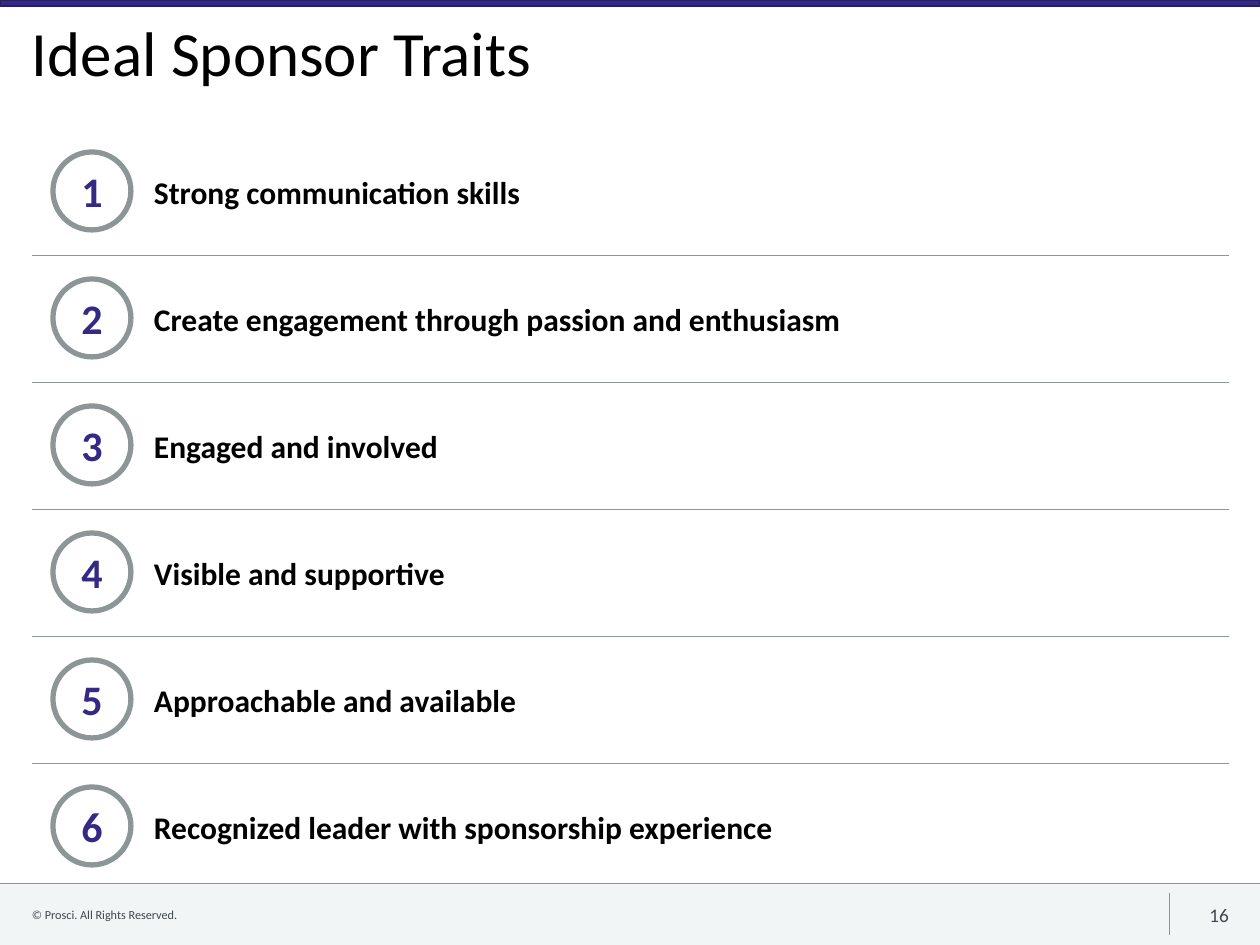
"""Build the Ideal Sponsor Traits slide: six numbered rows with a footer."""
from lxml import etree
from pptx import Presentation
from pptx import util as u
from pptx.dml.color import RGBColor
from pptx.enum import shapes, text
from pptx.oxml.ns import qn

SCALE = u.Inches(1) / 126
PURPLE = RGBColor(0x34, 0x2A, 0x86)
DARK_PURPLE = RGBColor(0x26, 0x1F, 0x63)
GRAY = RGBColor(0x8C, 0x96, 0x96)
PALE = RGBColor(0xF2, 0xF5, 0xF5)
SLATE = RGBColor(0x3F, 0x47, 0x4F)
BLACK = RGBColor(0, 0, 0)
LEFT, RIGHT, PITCH = 32, 1229, 127
TRAITS = [
    "Strong communication skills",
    "Create engagement through passion and enthusiasm",
    "Engaged and involved",
    "Visible and supportive",
    "Approachable and available",
    "Recognized leader with sponsorship experience",
]


def px(*lengths):
    return [round(length * SCALE) for length in lengths]


def write(box, words, size, color, align="LEFT", anchor="MIDDLE", bold=False, insets=(0, 0, 0, 0)):
    frame = box.text_frame
    left, top, right, bottom = px(*insets)
    frame_format = {
        "word_wrap": True,
        "auto_size": text.MSO_AUTO_SIZE.NONE,
        "vertical_anchor": text.MSO_ANCHOR[anchor],
        "margin_left": left,
        "margin_top": top,
        "margin_right": right,
        "margin_bottom": bottom,
    }
    for name, value in frame_format.items():
        setattr(frame, name, value)
    para = frame.paragraphs[0]
    para.alignment = text.PP_ALIGN[align]
    span = para.add_run()
    span.text = words
    span.font.color.rgb = color
    for name, value in {"name": "Calibri", "size": u.Pt(size), "bold": bold}.items():
        setattr(span.font, name, value)
    return para


deck = Presentation()
deck.slide_width, deck.slide_height = px(1260, 945)
page = deck.slides.add_slide(deck.slide_layouts[5])

for area, fill in [((0, 883, 1260, 62), PALE), ((0, 0, 1260, 6), PURPLE)]:
    band = page.shapes.add_shape(shapes.MSO_SHAPE.RECTANGLE, *px(*area))
    band.shadow.inherit = False
    band.fill.solid()
    band.fill.fore_color.rgb = fill
    band.line.fill.background()
band.line.color.rgb = DARK_PURPLE
band.line.width = u.Pt(1)

rules = [(0, 883, 1260, 883), (1169, 893, 1169, 935)]
for row in range(len(TRAITS) - 1):
    y = 255 + row * PITCH
    rules.append((LEFT, y, RIGHT, y))
for ends in rules:
    rule = page.shapes.add_connector(shapes.MSO_CONNECTOR.STRAIGHT, *px(*ends))
    rule.line.color.rgb = GRAY
    rule.line.width = u.Pt(0.5)
    etree.SubElement(rule._element.spPr, qn("a:effectLst"))

title = page.shapes.title
title.left, title.top, title.width, title.height = px(LEFT, 16, 1197, 113)
heading = write(title, "Ideal Sponsor Traits", 36, BLACK, anchor="TOP", insets=(0, 6, 0, 6))
heading.line_spacing = 0.9

rights = page.shapes.add_textbox(*px(LEFT, 901, 925, 28))
write(rights, "© Prosci. All Rights Reserved.", 7, SLATE, insets=(0, 6, 13, 6))
number = page.shapes.add_textbox(*px(1167, 902, 62, 26))
write(number, "16", 11, SLATE, align="RIGHT")

for row, trait in enumerate(TRAITS):
    label = page.shapes.add_textbox(*px(154, 173 + row * PITCH, 1053, 38))
    write(label, trait, 18, BLACK, bold=True)
    circle = page.shapes.add_shape(shapes.MSO_SHAPE.OVAL, *px(53, 152 + row * PITCH, 78, 78))
    circle.shadow.inherit = False
    circle.fill.background()
    circle.line.color.rgb = GRAY
    circle.line.width = u.Pt(3)
    write(circle, str(row + 1), 24, PURPLE, align="CENTER", bold=True, insets=(13, 6, 13, 6))

deck.save("out.pptx")
